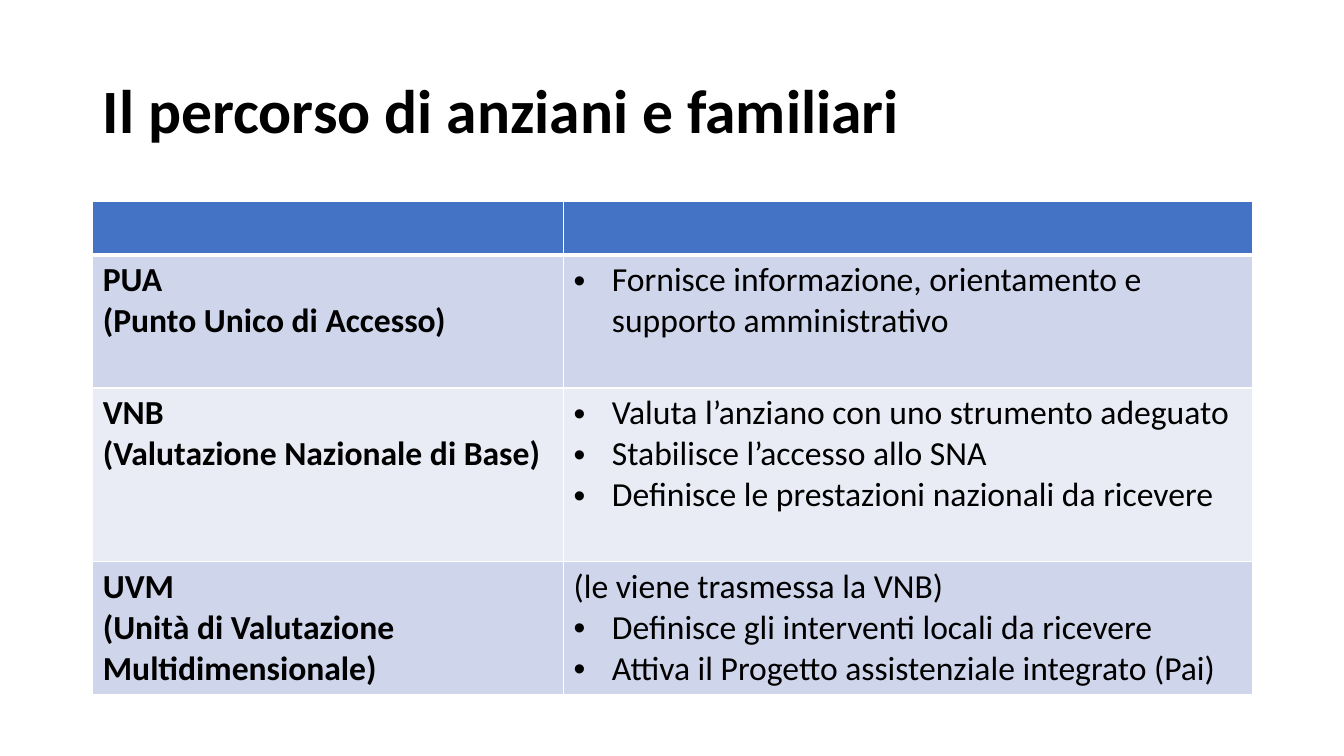
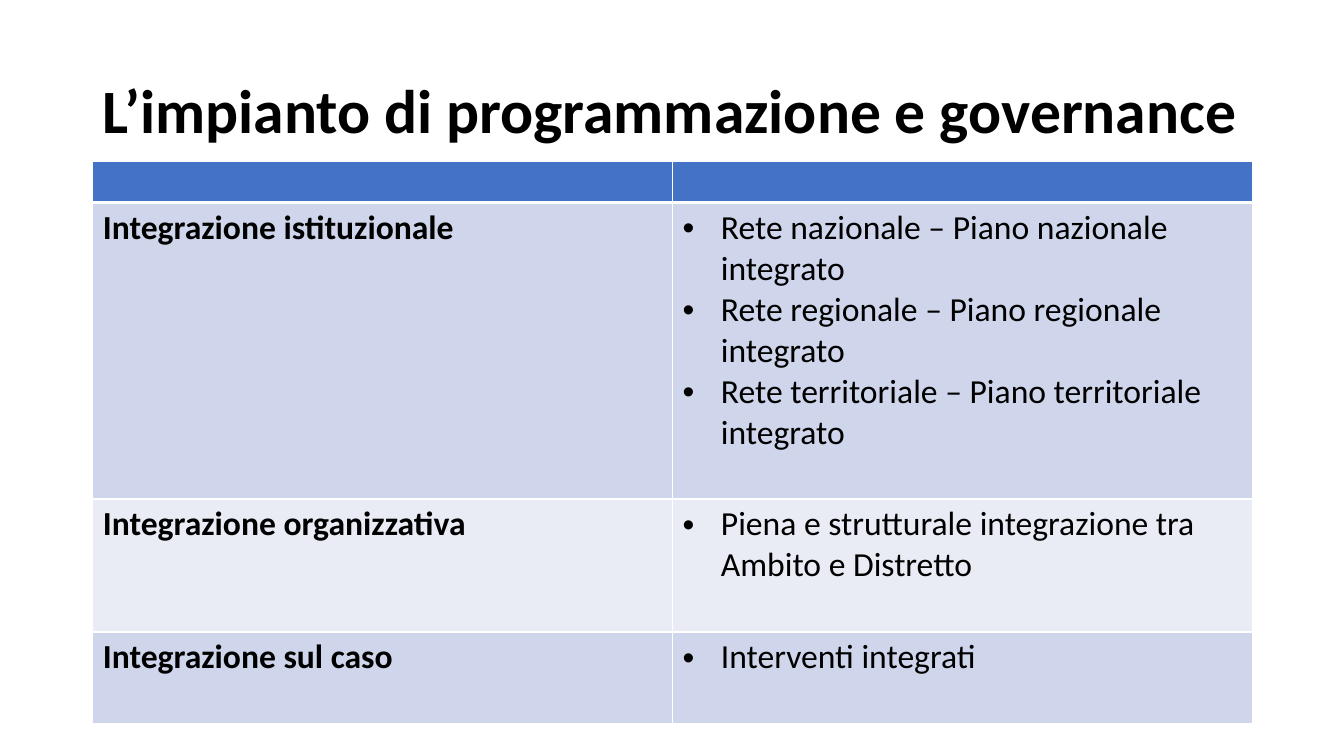
from dataclasses import dataclass

from lxml.etree import SubElement
from pptx import Presentation
from pptx.dml.color import RGBColor
from pptx.enum.text import MSO_ANCHOR, MSO_AUTO_SIZE, PP_ALIGN
from pptx.oxml.ns import qn
from pptx.util import Inches, Pt

FONT = "Calibri"
BLACK, WHITE = "000000", "FFFFFF"
HEADER, BANDS = "4472C4", ("CFD5EA", "E9EBF5")
LEFT, WIDTH = 0.92, 11.5
BULLET_INDENT = 0.38


@dataclass
class Row:
    height: float
    heading: list[str]
    points: list[str]
    intro: str = ""


@dataclass
class TableSlide:
    title: str
    top: float
    columns: tuple[float, float]
    header_height: float
    rows: list[Row]


SLIDES = [
    TableSlide("Il percorso di anziani e familiari", 2, (4.67, 6.83), 0.53, [
        Row(1.32, ["PUA", "(Punto Unico di Accesso)"],
            ["Fornisce informazione, orientamento e supporto amministrativo"]),
        Row(1.72, ["VNB", "(Valutazione Nazionale di Base)"],
            ["Valuta l’anziano con uno strumento adeguato",
             "Stabilisce l’accesso allo SNA",
             "Definisce le prestazioni nazionali da ricevere"]),
        Row(1.32, ["UVM", "(Unità di Valutazione Multidimensionale)"],
            ["Definisce gli interventi locali da ricevere",
             "Attiva il Progetto assistenziale integrato (Pai)"],
            intro="(le viene trasmessa la VNB)"),
    ]),
    TableSlide("L’impianto di programmazione e governance", 1.6, (5.75, 5.75), 0.41, [
        Row(2.94, ["Integrazione istituzionale"],
            ["Rete nazionale – Piano nazionale integrato",
             "Rete regionale – Piano regionale integrato",
             "Rete territoriale – Piano territoriale integrato"]),
        Row(1.32, ["Integrazione organizzativa"],
            ["Piena e strutturale integrazione tra Ambito e Distretto"]),
        Row(0.91, ["Integrazione sul caso"], ["Interventi integrati"]),
    ]),
]


def rgb(color: str) -> RGBColor:
    return RGBColor.from_string(color)


def add_run(p, text: str, size: float, bold: bool) -> None:
    r = p.add_run()
    r.text = text
    r.font.name, r.font.size, r.font.bold = FONT, Pt(size), bold
    r.font.color.rgb = rgb(BLACK)


def add_bullet(p) -> None:
    pPr = p._p.get_or_add_pPr()
    pPr.set("marL", str(Inches(BULLET_INDENT)))
    pPr.set("indent", str(-Inches(BULLET_INDENT)))
    SubElement(pPr, qn("a:buFont"), typeface="Arial")
    SubElement(pPr, qn("a:buChar"), char="•")


def style_cell(cell, row: int) -> None:
    """Draw white borders, thick under the header row, and the band fill."""
    tcPr = cell._tc.get_or_add_tcPr()
    widths = {"lnL": 1, "lnR": 1, "lnT": 3 if row == 1 else 1, "lnB": 3 if row == 0 else 1}
    for side, width in widths.items():
        ln = SubElement(tcPr, qn(f"a:{side}"), w=str(Pt(width)))
        SubElement(SubElement(ln, qn("a:solidFill")), qn("a:srgbClr"), val=WHITE)
    cell.fill.solid()
    cell.fill.fore_color.rgb = rgb(BANDS[(row - 1) % 2] if row else HEADER)


def write_cell(cell, lines: list[tuple[str, bool]], bold: bool) -> None:
    tf = cell.text_frame
    for i, (text, bulleted) in enumerate(lines):
        p = tf.add_paragraph() if i else tf.paragraphs[0]
        if bulleted:
            add_bullet(p)
        add_run(p, text, 24, bold)


def set_title(sp, text: str) -> None:
    sp.left, sp.top, sp.width, sp.height = map(Inches, (LEFT, 0.4, WIDTH, 1.45))
    tf = sp.text_frame
    tf.word_wrap = True
    tf.auto_size = MSO_AUTO_SIZE.NONE
    tf.vertical_anchor = MSO_ANCHOR.MIDDLE
    p = tf.paragraphs[0]
    p.alignment, p.line_spacing = PP_ALIGN.LEFT, 0.9
    add_run(p, text, 44, True)


def add_grid(s, data: TableSlide) -> None:
    heights = [data.header_height] + [row.height for row in data.rows]
    table = s.shapes.add_table(
        len(heights), len(data.columns), Inches(LEFT), Inches(data.top),
        Inches(WIDTH), Inches(sum(heights))).table
    for column, width in zip(table.columns, data.columns):
        column.width = Inches(width)
    for i, height in enumerate(heights):
        table.rows[i].height = Inches(height)
        for cell in table.rows[i].cells:
            style_cell(cell, i)
    for i, row in enumerate(data.rows, 1):
        intro = [(row.intro, False)] if row.intro else []
        write_cell(table.cell(i, 0), [(text, False) for text in row.heading], True)
        write_cell(table.cell(i, 1), intro + [(text, True) for text in row.points], False)


def main() -> None:
    prs = Presentation()
    prs.slide_width, prs.slide_height = Inches(13.33), Inches(7.5)
    for data in SLIDES:
        s = prs.slides.add_slide(prs.slide_layouts[5])  # title only
        set_title(s.shapes.title, data.title)
        add_grid(s, data)
    prs.save("out.pptx")


if __name__ == "__main__":
    main()
